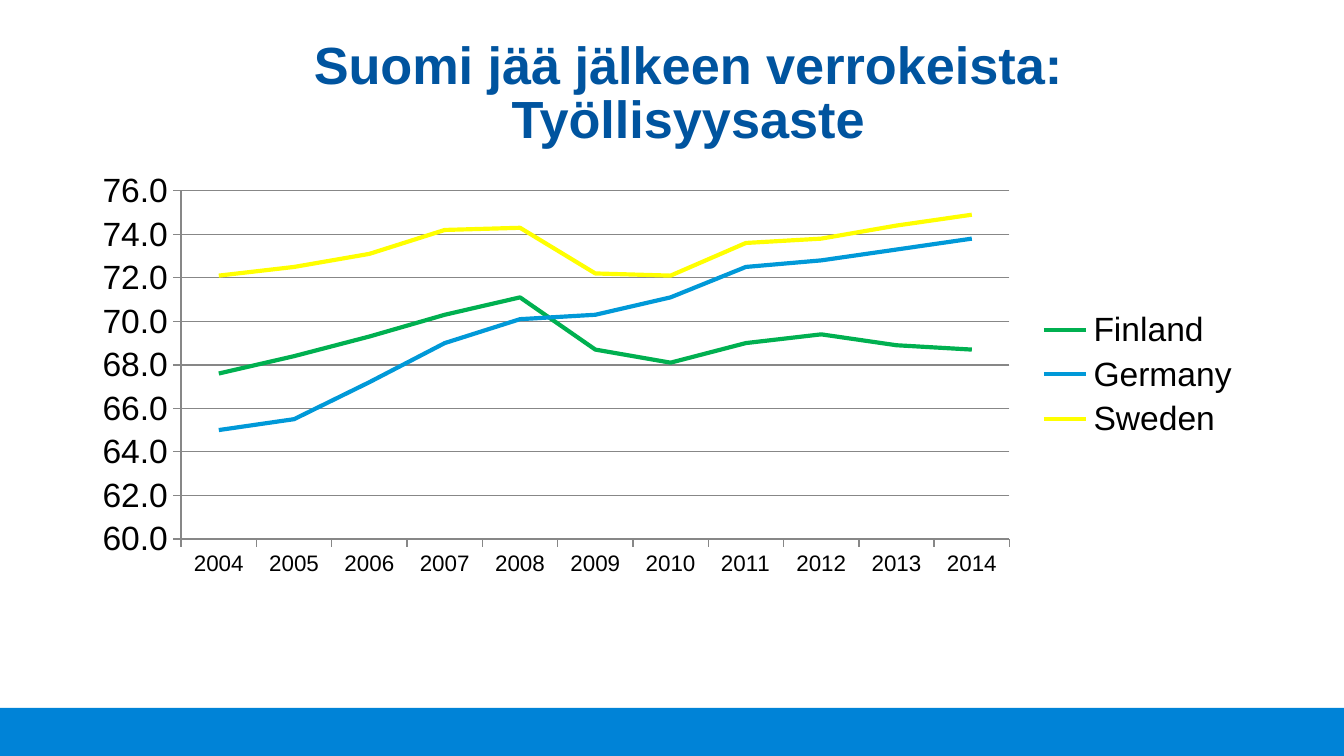
from lxml.etree import SubElement as Sub
from pptx import Presentation
from pptx.chart.data import CategoryChartData as Data
from pptx.dml.color import RGBColor as Rgb
from pptx.enum.chart import XL_CHART_TYPE as Kind, XL_LEGEND_POSITION as Side, XL_TICK_MARK as Tick
from pptx.enum.shapes import MSO_SHAPE as Form
from pptx.enum.text import MSO_ANCHOR as Anchor, PP_ALIGN as Align
from pptx.oxml.ns import qn
from pptx.util import Emu, Pt

TITLE = ["Suomi jää jälkeen verrokeista:", "Työllisyysaste"]
YEARS = [str(year) for year in range(2004, 2015)]
RATES = {
    "Finland": [67.6, 68.4, 69.3, 70.3, 71.1, 68.7, 68.1, 69.0, 69.4, 68.9, 68.7],
    "Germany": [65.0, 65.5, 67.2, 69.0, 70.1, 70.3, 71.1, 72.5, 72.8, 73.3, 73.8],
    "Sweden": [72.1, 72.5, 73.1, 74.2, 74.3, 72.2, 72.1, 73.6, 73.8, 74.4, 74.9],
}
HEX = {"title": "00549F", "band": "0083D7", "text": "000000", "grid": "878787",
       "Finland": "00B050", "Germany": "0099D8", "Sweden": "FFFF00"}
SIZE = (1344, 756)
BAND = (0, 708, 1344, 48)
HEAD = (69, 44, 1238, 103)
CHART = (79, 164, 1175, 421)
PLOT = (181, 191, 828, 348)
SCALE = 914400 / 134.4


def px(*vals):
    return [Emu(round(val * SCALE)) for val in vals]


def put(item, **vals):
    for key, val in vals.items():
        setattr(item, key, val)


def hue(name):
    return Rgb.from_string(HEX[name])


def style(font, name, size, bold=False):
    put(font, name="Arial", size=Pt(size), bold=bold)
    font.color.rgb = hue(name)


def stroke(line, name, width):
    line.color.rgb = hue(name)
    line.width = Pt(width)


def add_band(slide):
    band = slide.shapes.add_shape(Form.RECTANGLE, *px(*BAND))
    band.shadow.inherit = False
    band.fill.solid()
    band.fill.fore_color.rgb = hue("band")
    band.line.fill.background()


def add_title(slide):
    frame = slide.shapes.add_textbox(*px(*HEAD)).text_frame
    put(frame, word_wrap=True, vertical_anchor=Anchor.MIDDLE)
    para = frame.paragraphs[0]
    para.text = "\v".join(TITLE)
    put(para, alignment=Align.CENTER, line_spacing=0.85)
    for run in para.runs:
        style(run.font, "title", 28, True)


def fix_plot(chart):
    area = chart.element.find(".//" + qn("c:plotArea"))
    box = area.find(qn("c:layout"))
    if box is None:
        box = area.makeelement(qn("c:layout"))
        area.insert(0, box)
    left, top, wide, high = CHART
    x, y, w, h = PLOT
    marks = {"layoutTarget": "inner", "xMode": "edge", "yMode": "edge",
             "x": round((x - left) / wide, 3), "y": round((y - top) / high, 3),
             "w": round(w / wide, 3), "h": round(h / high, 3)}
    manual = Sub(box, qn("c:manualLayout"))
    for key, val in marks.items():
        Sub(manual, qn("c:" + key)).set("val", str(val))


def add_chart(slide):
    data = Data(number_format="0.0")
    data.categories = YEARS
    for name, vals in RATES.items():
        data.add_series(name, vals)
    chart = slide.shapes.add_chart(Kind.LINE, *px(*CHART), data).chart
    put(chart, has_title=False, has_legend=True)
    put(chart.legend, position=Side.RIGHT, include_in_layout=False)
    style(chart.font, "text", 18)
    chart.plots[0].vary_by_categories = False
    for line in chart.plots[0].series:
        line.smooth = False
        stroke(line.format.line, line.name, 2.25)
    years, rates = chart.category_axis, chart.value_axis
    for axis, size in ((years, 12), (rates, 18)):
        put(axis, major_tick_mark=Tick.OUTSIDE, minor_tick_mark=Tick.NONE)
        style(axis.tick_labels.font, "text", size)
        stroke(axis.format.line, "grid", 0.75)
    put(rates, minimum_scale=60, maximum_scale=76, major_unit=2, has_major_gridlines=True)
    put(rates.tick_labels, number_format="#,##0.0", number_format_is_linked=False)
    stroke(rates.major_gridlines.format.line, "grid", 0.75)
    fix_plot(chart)


def main():
    deck = Presentation()
    deck.slide_width, deck.slide_height = px(*SIZE)
    slide = deck.slides.add_slide(deck.slide_layouts[6])
    add_band(slide)
    add_title(slide)
    add_chart(slide)
    deck.save("out.pptx")


if __name__ == "__main__":
    main()
